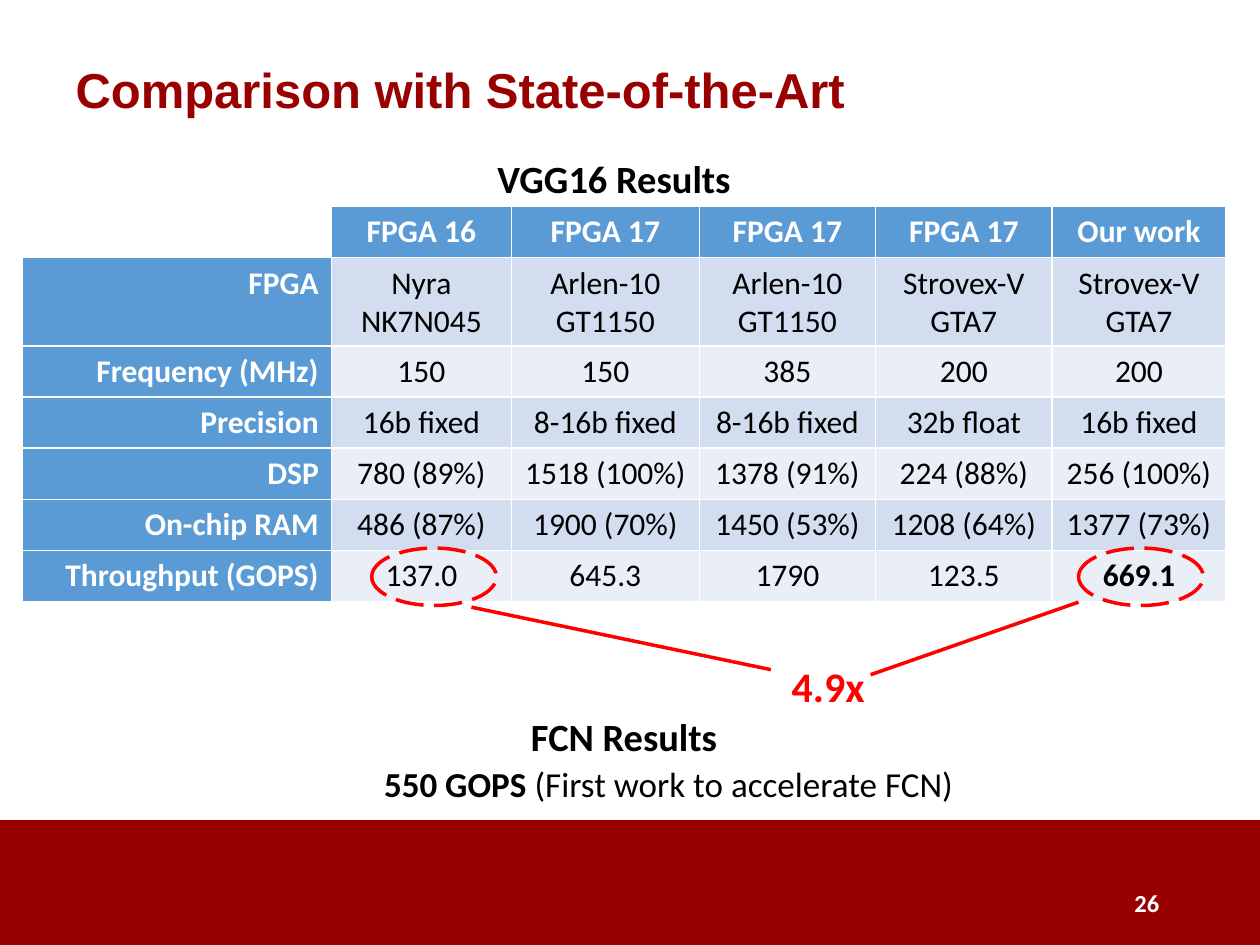
from dataclasses import dataclass
from typing import NamedTuple

from lxml.etree import SubElement
from pptx import Presentation
from pptx.dml.color import RGBColor as Color
from pptx.enum.dml import MSO_LINE_DASH_STYLE as Dash
from pptx.enum.shapes import MSO_CONNECTOR as Connector, MSO_SHAPE as Preset
from pptx.enum.text import MSO_ANCHOR as Anchor, MSO_AUTO_SIZE as AutoSize, PP_ALIGN as Align
from pptx.oxml.ns import qn
from pptx.util import Inches, Pt


@dataclass(frozen=True)
class Theme:
    """Colours, fonts and type sizes of the slide."""
    maroon: str = "990000"
    header: str = "5B9BD5"
    bands: tuple = ("D2DEEF", "EAEFF7")
    white: str = "FFFFFF"
    black: str = "000000"
    accent: str = "FF0000"
    title_font: str = "Arial"
    body_font: str = "Calibri"
    title: int = 28
    callout: int = 24
    heading: int = 22
    body: int = 20
    cell: int = 18
    number: int = 14
    line: int = 2


class Box(NamedTuple):
    """A rectangle in inches."""
    left: float
    top: float
    width: float
    height: float

    def emu(self):
        """Return the four lengths for python-pptx."""
        return [Inches(length) for length in self]

    def area(self, left, top, width, height):
        """Return a box given as shares of this one."""
        return Box(self.left + left * self.width, self.top + top * self.height,
                   width * self.width, height * self.height)

    def point(self, across, down):
        """Return a point given as shares of this box."""
        return Inches(self.left + across * self.width), Inches(self.top + down * self.height)


THEME = Theme()
PAGE = Box(0, 0, 10, 7.5)
COLUMN_WIDTHS = (2.45, 1.43, 1.49, 1.4, 1.4, 1.38)
RESULTS = (
    ("", "FPGA 16", "FPGA 17", "FPGA 17", "FPGA 17", "Our work"),
    ("FPGA", "Nyra\nNK7N045", "Arlen-10\nGT1150", "Arlen-10\nGT1150",
     "Strovex-V\nGTA7", "Strovex-V\nGTA7"),
    ("Frequency (MHz)", "150", "150", "385", "200", "200"),
    ("Precision", "16b fixed", "8-16b fixed", "8-16b fixed", "32b float", "16b fixed"),
    ("DSP", "780 (89%)", "1518 (100%)", "1378 (91%)", "224 (88%)", "256 (100%)"),
    ("On-chip RAM", "486 (87%)", "1900 (70%)", "1450 (53%)", "1208 (64%)", "1377 (73%)"),
    ("Throughput (GOPS)", "137.0", "645.3", "1790", "123.5", "669.1"),
)


def style_font(font, size, color, bold=True, name=THEME.body_font):
    """Set the face, size, colour and weight of a font."""
    font.name, font.size, font.bold = name, Pt(size), bold
    font.color.rgb = Color.from_string(color)


def add_text(slide, box, text, size, color=THEME.black, bold=True, align=Align.LEFT):
    """Add a one-line text box and return its paragraph."""
    frame = slide.shapes.add_textbox(*box.emu()).text_frame
    frame.word_wrap = True
    frame.auto_size = AutoSize.SHAPE_TO_FIT_TEXT
    paragraph = frame.paragraphs[0]
    paragraph.text, paragraph.alignment = text, align
    style_font(paragraph.font, size, color, bold)
    return paragraph


def add_title(slide, box, text):
    """Place and format the title placeholder."""
    title = slide.shapes.title
    title.left, title.top, title.width, title.height = box.emu()
    title.text_frame.text = text
    title.text_frame.vertical_anchor = Anchor.MIDDLE
    paragraph = title.text_frame.paragraphs[0]
    paragraph.alignment, paragraph.line_spacing = Align.LEFT, 0.9
    style_font(paragraph.font, THEME.title, THEME.maroon, name=THEME.title_font)


def add_footer(slide, box, number):
    """Draw the footer band with the slide number."""
    band = slide.shapes.add_shape(Preset.RECTANGLE, *box.emu())
    band.shadow.inherit = False
    band.fill.solid()
    band.fill.fore_color.rgb = Color.from_string(THEME.maroon)
    band.line.fill.background()
    add_text(slide, box.area(0.71, 0.49, 0.22, 0.34), number, THEME.number,
             THEME.white, align=Align.RIGHT)


def fill_cell(cell, text, row, column):
    """Write one table cell and colour it by its place in the grid."""
    is_header = row == 0 or column == 0
    is_best = (row, column) == (len(RESULTS) - 1, len(COLUMN_WIDTHS) - 1)
    if row == column == 0:
        cell.fill.background()
    else:
        cell.fill.solid()
        color = THEME.header if is_header else THEME.bands[(row - 1) % 2]
        cell.fill.fore_color.rgb = Color.from_string(color)
    cell.text = text
    for paragraph in cell.text_frame.paragraphs:
        paragraph.alignment = Align.CENTER if column else Align.RIGHT
        style_font(paragraph.font, THEME.cell, THEME.white if is_header else THEME.black,
                   is_header or is_best)


def add_results_table(slide, box):
    """Build the comparison table, with a taller row for the two-line device names."""
    extra_line = 0.29
    table = slide.shapes.add_table(len(RESULTS), len(COLUMN_WIDTHS), *box.emu()).table
    table.first_col = True
    for column, width in zip(table.columns, COLUMN_WIDTHS):
        column.width = Inches(width)
    base = (box.height - extra_line) / len(RESULTS)
    for index, (row, texts) in enumerate(zip(table.rows, RESULTS)):
        row.height = Inches(base + (extra_line if index == 1 else 0))
        for column, text in enumerate(texts):
            fill_cell(table.cell(index, column), text, index, column)


def add_ring(slide, box):
    """Circle a value with a dashed ellipse."""
    ring = slide.shapes.add_shape(Preset.OVAL, *box.emu())
    ring.shadow.inherit = False
    ring.fill.background()
    ring.line.color.rgb = Color.from_string(THEME.accent)
    ring.line.width = Pt(THEME.line)
    ring.line.dash_style = Dash.LONG_DASH


def add_link(slide, start, end):
    """Draw a plain line between two points."""
    link = slide.shapes.add_connector(Connector.STRAIGHT, *start, *end)
    link.line.color.rgb = Color.from_string(THEME.accent)
    link.line.width = Pt(THEME.line)
    SubElement(link._element.spPr, qn("a:effectLst"))


def add_speedup(slide, box):
    """Ring the two compared throughputs and link them to the speedup."""
    for left in (0, 0.85):
        add_ring(slide, box.area(left, 0, 0.15, 0.34))
    add_link(slide, box.point(0.12, 0.35), box.point(0.48, 0.72))
    add_link(slide, box.point(0.85, 0.32), box.point(0.6, 0.75))
    add_text(slide, box.area(0.49, 0.63, 0.26, 0.37), "4.9x", THEME.callout, THEME.accent)


def add_network_results(slide, box):
    """Write the heading and figure for the second network."""
    paragraph = add_text(slide, box.area(0, 0.47, 1, 0.53), "550 GOPS ", THEME.body, bold=False)
    paragraph.runs[0].font.bold = True
    paragraph.add_run().text = "(First work to accelerate FCN)"
    add_text(slide, box.area(0.21, 0, 0.46, 0.57), "FCN Results", THEME.heading)


def main():
    """Build and save the presentation."""
    presentation = Presentation()
    presentation.slide_width, presentation.slide_height = Inches(PAGE.width), Inches(PAGE.height)
    slide = presentation.slides.add_slide(presentation.slide_layouts[5])
    add_footer(slide, Box(0, 6.51, 10, 0.99), "26")
    add_title(slide, Box(0.5, 0.3, 9, 0.87), "Comparison with State-of-the-Art")
    add_results_table(slide, Box(0.18, 1.64, sum(COLUMN_WIDTHS), 3.13))
    add_text(slide, Box(3.85, 1.18, 2.53, 0.47), "VGG16 Results", THEME.heading)
    add_speedup(slide, Box(2.95, 4.35, 6.6, 1.34))
    add_network_results(slide, Box(2.95, 5.61, 5.55, 0.83))
    presentation.save("out.pptx")


if __name__ == "__main__":
    main()
